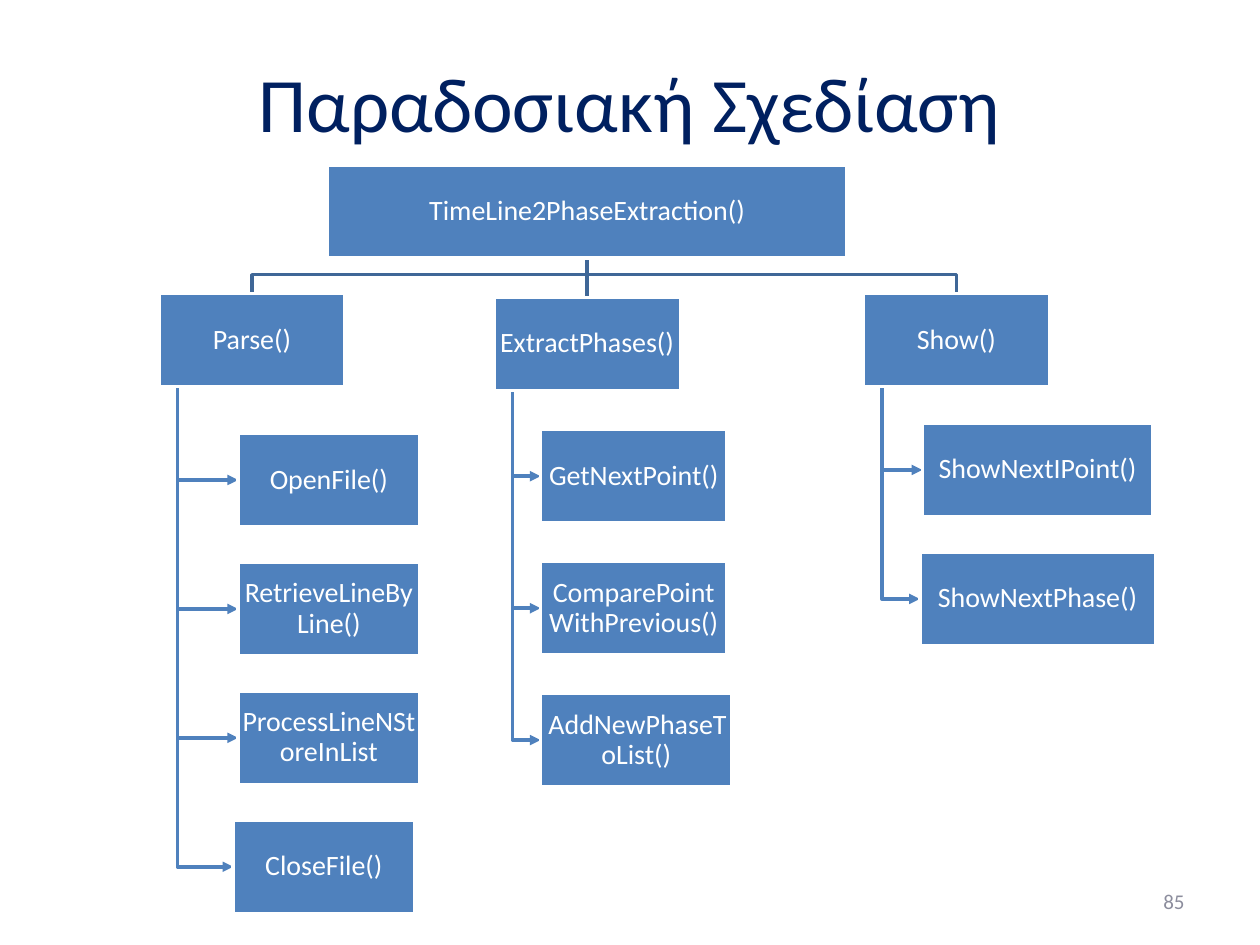
from dataclasses import dataclass
from typing import NamedTuple

from lxml import etree
from pptx import Presentation
from pptx import util as u
from pptx.dml.color import RGBColor
from pptx.enum import shapes, text
from pptx.oxml.ns import qn

# Grid of 100 columns by 75 rows, each cell 0.1 inch
CELL = u.Inches(0.1)
COLUMNS, ROWS = 100, 75

NAVY, GREY, WHITE = "002060", "8C8D9D", "FFFFFF"
BLUE, DARK_BLUE = "4F81BD", "3F6797"
FONT = "Calibri"
BOX_ROWS = 7.4
LINE_WIDTH = u.Pt(2)
BUS_ROW = 21.8  # row where the root's line splits


class Box(NamedTuple):
    label: str
    column: float
    row: float
    columns: float

    @property
    def center(self) -> float:
        return self.column + self.columns / 2

    @property
    def middle(self) -> float:
        return self.row + BOX_ROWS / 2

    @property
    def bottom(self) -> float:
        return self.row + BOX_ROWS


class Call(NamedTuple):
    label: str
    column: float
    columns: float


@dataclass
class Branch:
    head: Box
    first_row: float
    pitch: float
    calls: list[Call]

    def children(self) -> list[Box]:
        return [Box(call.label, call.column, self.first_row + index * self.pitch, call.columns)
                for index, call in enumerate(self.calls)]


ROOT = Box("TimeLine2PhaseExtraction()", 26, 13.1, 41.2)
BRANCHES = [
    Branch(Box("Parse()", 12.6, 23.3, 14.8), 34.4, 10.23, [
        Call("OpenFile()", 18.9, 14.4),
        Call("RetrieveLineByLine()", 18.9, 14.4),
        Call("ProcessLineNStoreInList", 18.9, 14.4),
        Call("CloseFile()", 18.5, 14.4)]),
    Branch(Box("ExtractPhases()", 39.2, 23.6, 14.8), 34.1, 10.47, [
        Call("GetNextPoint()", 42.9, 14.8),
        Call("ComparePointWithPrevious()", 42.9, 14.8),
        Call("AddNewPhaseToList()", 42.9, 15.2)]),
    Branch(Box("Show()", 68.5, 23.3, 14.8), 33.6, 10.23, [
        Call("ShowNextIPoint()", 73.2, 18.3),
        Call("ShowNextPhase()", 73, 18.7)]),
]


def cells(count: float) -> int:
    return round(count * CELL)


def color(value: str) -> RGBColor:
    return RGBColor.from_string(value)


def write(shape, words: str, size: int, ink: str, align, spacing: float = 1.0) -> None:
    frame = shape.text_frame
    frame.word_wrap = True
    frame.vertical_anchor = text.MSO_ANCHOR.MIDDLE
    paragraph = frame.paragraphs[0]
    paragraph.alignment = align
    paragraph.line_spacing = spacing
    run = paragraph.add_run()
    run.text = words
    run.font.name = FONT
    run.font.size = u.Pt(size)
    run.font.color.rgb = color(ink)


def draw_text(slide, words: str, column: float, row: float, columns: float, rows: float,
              size: int, ink: str, align) -> None:
    shape = slide.shapes.add_textbox(*map(cells, (column, row, columns, rows)))
    write(shape, words, size, ink, align)


def draw_box(slide, box: Box) -> None:
    shape = slide.shapes.add_shape(
        shapes.MSO_SHAPE.RECTANGLE,
        *map(cells, (box.column, box.row, box.columns, BOX_ROWS)))
    shape.shadow.inherit = False
    shape.fill.solid()
    shape.fill.fore_color.rgb = color(BLUE)
    shape.line.color.rgb = color(WHITE)
    shape.line.width = LINE_WIDTH
    frame = shape.text_frame
    frame.margin_left = frame.margin_right = u.Inches(0.01)
    frame.margin_top = frame.margin_bottom = u.Inches(0.01)
    write(shape, box.label, 16, WHITE, text.PP_ALIGN.CENTER, 0.9)


def draw_path(slide, points: list[tuple[float, float]], ink: str, arrow: bool = False) -> None:
    start, *rest = [(cells(column), cells(row)) for column, row in points]
    if len(rest) == 1:
        shape = slide.shapes.add_connector(shapes.MSO_CONNECTOR.STRAIGHT, *start, *rest[0])
        etree.SubElement(shape._element.spPr, qn("a:effectLst"))
    else:
        builder = slide.shapes.build_freeform(*start)
        builder.add_line_segments(rest, close=False)
        shape = builder.convert_to_shape()
        shape.shadow.inherit = False
        shape.fill.background()
    shape.line.color.rgb = color(ink)
    shape.line.width = LINE_WIDTH
    if arrow:
        etree.SubElement(shape.line._get_or_add_ln(), qn("a:tailEnd"), type="triangle")


def draw_lines(slide, branch: Branch) -> None:
    head = branch.head
    # Root to branch head: straight when they share a center
    if abs(head.center - ROOT.center) < 0.1:
        bends = []
    else:
        bends = [(ROOT.center, BUS_ROW), (head.center, BUS_ROW)]
    draw_path(slide, [(ROOT.center, ROOT.bottom), *bends, (head.center, head.row)], DARK_BLUE)

    # Branch head to each call, along a shared spine
    spine = head.column + head.columns / 10
    for child in branch.children():
        draw_path(slide, [(spine, head.bottom), (spine, child.middle),
                          (child.column, child.middle)], BLUE, arrow=True)


def main() -> None:
    presentation = Presentation()
    presentation.slide_width = cells(COLUMNS)
    presentation.slide_height = cells(ROWS)
    slide = presentation.slides.add_slide(presentation.slide_layouts[6])

    # Title and slide number
    draw_text(slide, "Παραδοσιακή Σχεδίαση", 5, 3, 90, 10.1, 44, NAVY, text.PP_ALIGN.CENTER)
    draw_text(slide, "85", 71.7, 69.5, 23.3, 4, 12, GREY, text.PP_ALIGN.RIGHT)

    # Lines lie behind the boxes
    for branch in BRANCHES:
        draw_lines(slide, branch)

    # Boxes of the call tree
    draw_box(slide, ROOT)
    for branch in BRANCHES:
        for box in [branch.head, *branch.children()]:
            draw_box(slide, box)

    presentation.save("out.pptx")


if __name__ == "__main__":
    main()
